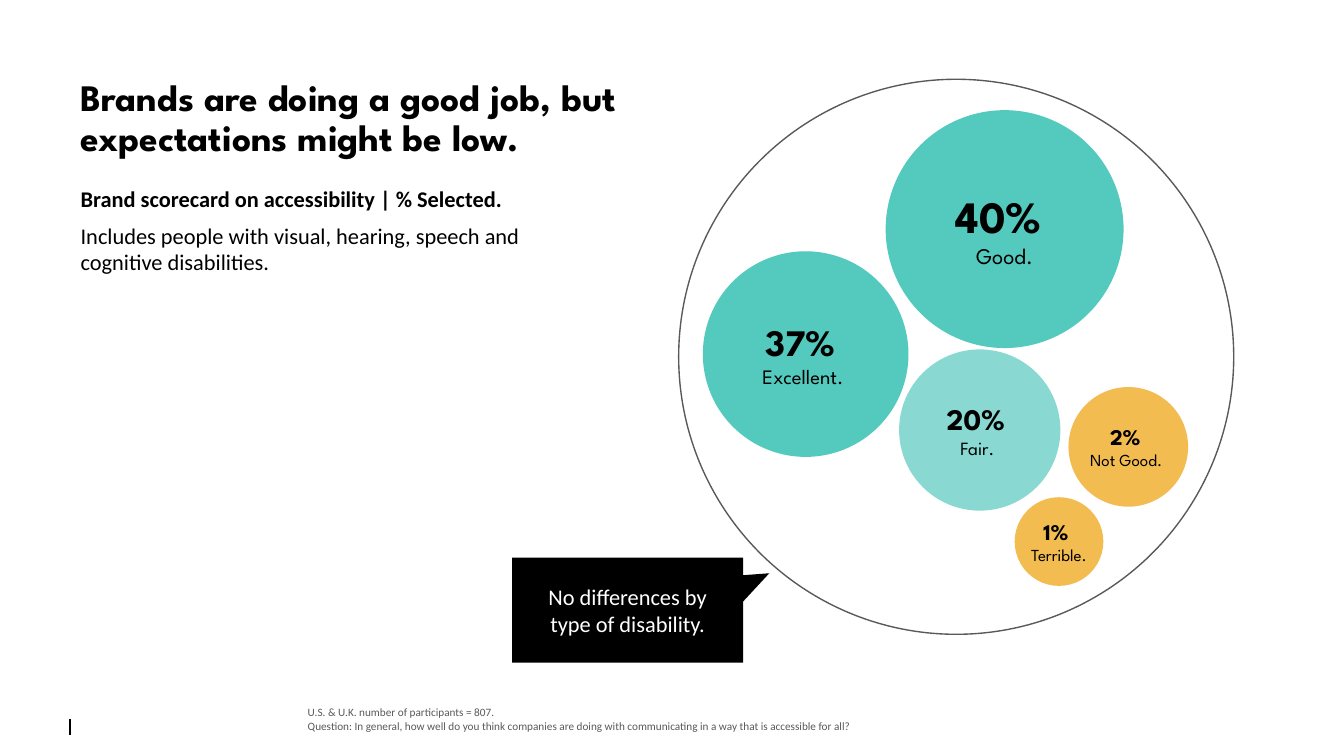
from lxml import etree
from pptx import Presentation
from pptx.dml.color import RGBColor
from pptx.enum.shapes import MSO_CONNECTOR, MSO_SHAPE
from pptx.enum.text import MSO_ANCHOR, MSO_AUTO_SIZE, PP_ALIGN
from pptx.oxml.ns import qn
from pptx.util import Inches, Pt

HUES = {"ink": "000000", "paper": "FFFFFF", "gray": "595959",
        "teal": "3BC1B5", "gold": "F3BC51"}
HEAD, BODY = "League Spartan", "Calibri"


def write(frame, lines, hue="ink", align=PP_ALIGN.LEFT):
    """Fill a frame with lines of (text, font, size, bold)."""
    frame.word_wrap = True
    frame.auto_size = MSO_AUTO_SIZE.NONE
    frame.text = "\n".join(line[0] for line in lines)
    for para, (_, face, size, bold) in zip(frame.paragraphs, lines):
        para.alignment = align
        para.space_before = Pt(0)
        font = para.runs[0].font
        font.name, font.size, font.bold = face, Pt(size), bold
        font.color.rgb = RGBColor.from_string(HUES[hue])


def place(item, x, y, w, h):
    """Move a text holder and clear its insets."""
    item.left, item.top, item.width, item.height = map(Inches, (x, y, w, h))
    frame = item.text_frame
    frame.margin_left = frame.margin_right = 0
    frame.margin_top = frame.margin_bottom = 0
    frame.vertical_anchor = MSO_ANCHOR.TOP
    return frame


# Widescreen page, 16:9
deck = Presentation()
deck.slide_width = Inches(10)
deck.slide_height = Inches(10) * 9 // 16
slide = deck.slides.add_slide(deck.slide_layouts[1])
shapes = slide.shapes

# Footer tick
tick = shapes.add_connector(MSO_CONNECTOR.STRAIGHT, Inches(0.52), Inches(5.35),
                            Inches(0.52), Inches(5.47))
tick.line.color.rgb = RGBColor.from_string(HUES["ink"])
tick.line.width = Pt(1.25)
etree.SubElement(tick._element.spPr, qn("a:effectLst"))

# Title
frame = place(shapes.title, 0.6, 0.59, 4.34, 0.61)
write(frame, [("Brands are doing a good job, but expectations might be low.",
               HEAD, 20, True)])
frame.paragraphs[0].line_spacing = 0.9

# Subtitle
frame = place(slide.placeholders[1], 0.6, 1.4, 3.41, 0.7)
write(frame, [
    ("Brand scorecard on accessibility | % Selected.", BODY, 12, True),
    ("Includes people with visual, hearing, speech and cognitive disabilities.",
     BODY, 12, False)])
for para in frame.paragraphs:
    props = para._p.get_or_add_pPr()
    props.set("marL", "0")
    props.set("indent", "0")
    etree.SubElement(props, qn("a:buNone"))
    para.space_after = Pt(5)
frame.paragraphs[0].line_spacing = 0.9

# Outer ring
ring = shapes.add_shape(MSO_SHAPE.OVAL, Inches(5.05), Inches(0.59),
                        Inches(4.13), Inches(4.13))
ring.shadow.inherit = False
ring.fill.background()
ring.line.color.rgb = RGBColor.from_string(HUES["gray"])
ring.line.width = Pt(0.75)

# Score bubbles: x, y, size, hue, opacity %, share, share size, label, label size
bubbles = [
    (6.59, 0.82, 1.77, "teal", 87, "40% ", 24, "Good.", 12),
    (5.23, 1.87, 1.53, "teal", 87, "37% ", 20, "Excellent. ", 11),
    (6.69, 2.6, 1.2, "teal", 60, "20% ", 16, "Fair. ", 10),
    (7.95, 2.88, 0.89, "gold", 100, "2% ", 12, "Not Good. ", 9),
    (7.55, 3.7, 0.66, "gold", 100, "1% ", 12, "Terrible.", 9),
]
for x, y, size, hue, alpha, share, big, label, small in bubbles:
    disc = shapes.add_shape(MSO_SHAPE.OVAL, Inches(x), Inches(y),
                            Inches(size), Inches(size))
    disc.shadow.inherit = False
    disc.fill.solid()
    disc.fill.fore_color.rgb = RGBColor.from_string(HUES[hue])
    disc.line.fill.background()
    if alpha < 100:
        tone = disc._element.spPr.find(qn("a:solidFill"))[0]
        etree.SubElement(tone, qn("a:alpha"), val=str(alpha * 1000))
    frame = disc.text_frame
    if size < 1:
        frame.margin_left = frame.margin_right = 0
    write(frame, [(share, HEAD, big, True), (label, HEAD, small, False)],
          align=PP_ALIGN.CENTER)

# Callout
note = shapes.add_shape(MSO_SHAPE.RECTANGULAR_CALLOUT, Inches(3.81),
                        Inches(4.15), Inches(1.72), Inches(0.78))
note.adjustments[0], note.adjustments[1] = 0.613, -0.352
note.shadow.inherit = False
note.fill.solid()
note.fill.fore_color.rgb = RGBColor.from_string(HUES["ink"])
note.line.fill.background()
frame = note.text_frame
frame.margin_left = frame.margin_right = Inches(0.2)
write(frame, [("No differences by type of disability.", BODY, 12, False)],
      "paper", PP_ALIGN.CENTER)

# Footnote
frame = place(shapes.add_textbox(0, 0, 0, 0), 2.29, 5.18, 6.47, 0.27)
frame.vertical_anchor = MSO_ANCHOR.BOTTOM
write(frame, [
    ("U.S. & U.K. number of participants = 807.", BODY, 6, False),
    ("Question: In general, how well do you think companies are doing with "
     "communicating in a way that is accessible for all?", BODY, 6, False)], "gray")

deck.save("out.pptx")
